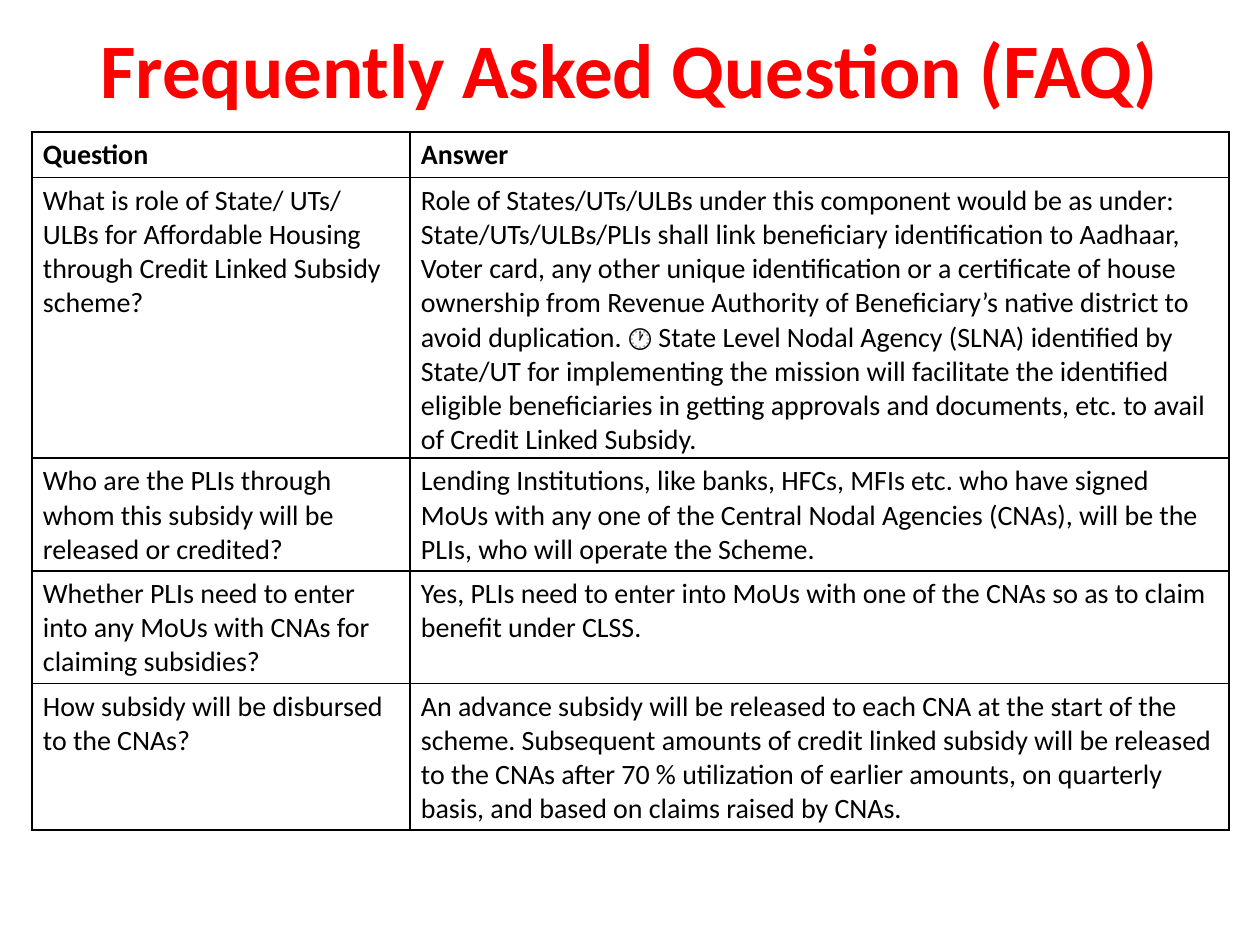
from lxml.etree import SubElement as Sub
from pptx import Presentation as Deck
from pptx.dml.color import RGBColor as Rgb
from pptx.enum.text import MSO_ANCHOR as Anchor, PP_ALIGN as Align
from pptx.oxml.ns import qn
from pptx.util import Emu, Pt

COLORS = {"title": "FF0000", "text": "000000", "line": "000000"}
COLS = [378, 819]
ROWS = [45, 280, 112, 112, 146]
FAQ = [
    ("Question", "Answer"),
    ("What is role of State/ UTs/ ULBs for Affordable Housing through Credit Linked Subsidy scheme?",
     "Role of States/UTs/ULBs under this component would be as under: "
     "State/UTs/ULBs/PLIs shall link beneficiary identification to Aadhaar, "
     "Voter card, any other unique identification or a certificate of house "
     "ownership from Revenue Authority of Beneficiary’s native district to "
     "avoid duplication. 🕐 State Level Nodal Agency (SLNA) identified by "
     "State/UT for implementing the mission will facilitate the identified "
     "eligible beneficiaries in getting approvals and documents, etc. to avail "
     "of Credit Linked Subsidy."),
    ("Who are the PLIs through whom this subsidy will be released or credited?",
     "Lending Institutions, like banks, HFCs, MFIs etc. who have signed "
     "MoUs with any one of the Central Nodal Agencies (CNAs), will be the "
     "PLIs, who will operate the Scheme."),
    ("Whether PLIs need to enter into any MoUs with CNAs for claiming subsidies?",
     "Yes, PLIs need to enter into MoUs with one of the CNAs so as to claim "
     "benefit under CLSS."),
    ("How subsidy will be disbursed to the CNAs?",
     "An advance subsidy will be released to each CNA at the start of the "
     "scheme. Subsequent amounts of credit linked subsidy will be released "
     "to the CNAs after 70 % utilization of earlier amounts, on quarterly "
     "basis, and based on claims raised by CNAs."),
]


def px(n):
    """Turn pixels into EMU."""
    return Emu(n * 914400 // 126)


def write(frame, text, size=16, color="text", bold=False, align=Align.LEFT):
    """Put formatted text into a frame."""
    frame.word_wrap = True
    par = frame.paragraphs[0]
    par.alignment = align
    run = par.add_run()
    run.text = text
    font = run.font
    font.name, font.size, font.bold = "Calibri", Pt(size), bold
    font.color.rgb = Rgb.from_string(COLORS[color])


def add_title(slide, text):
    """Add the heading box."""
    box = slide.shapes.add_textbox(px(21), px(10), px(1218), px(105))
    frame = box.text_frame
    frame.margin_left = frame.margin_right = px(11)
    frame.margin_top = frame.margin_bottom = px(11)
    frame.vertical_anchor = Anchor.TOP
    write(frame, text, size=44, color="title", bold=True, align=Align.CENTER)


def rule(cell):
    """Draw a thin line on each side of a cell."""
    props = cell._tc.get_or_add_tcPr()
    for at, side in enumerate(("lnL", "lnR", "lnT", "lnB")):
        line = Sub(props, qn(f"a:{side}"), w=str(Pt(1)))
        fill = Sub(line, qn("a:solidFill"))
        Sub(fill, qn("a:srgbClr"), val=COLORS["line"])
        props.insert(at, line)


def add_faq(slide):
    """Add the table of questions and answers."""
    frame = slide.shapes.add_table(len(ROWS), len(COLS), px(32), px(132),
                                   px(sum(COLS)), px(sum(ROWS)))
    table = frame.table
    table.first_row = table.horz_banding = False
    for col, wide in zip(table.columns, COLS):
        col.width = px(wide)
    for at, (row, high) in enumerate(zip(table.rows, ROWS)):
        row.height = px(high)
        for cell, text in zip(row.cells, FAQ[at]):
            cell.margin_left = cell.margin_right = px(11)
            cell.margin_top = cell.margin_bottom = px(6)
            cell.fill.background()
            rule(cell)
            write(cell.text_frame, text, bold=at == 0)


def main():
    """Build and save the slide."""
    deck = Deck()
    deck.slide_width, deck.slide_height = px(1260), px(945)
    slide = deck.slides.add_slide(deck.slide_layouts[6])
    add_title(slide, "Frequently Asked Question (FAQ)")
    add_faq(slide)
    deck.save("out.pptx")


if __name__ == "__main__":
    main()
